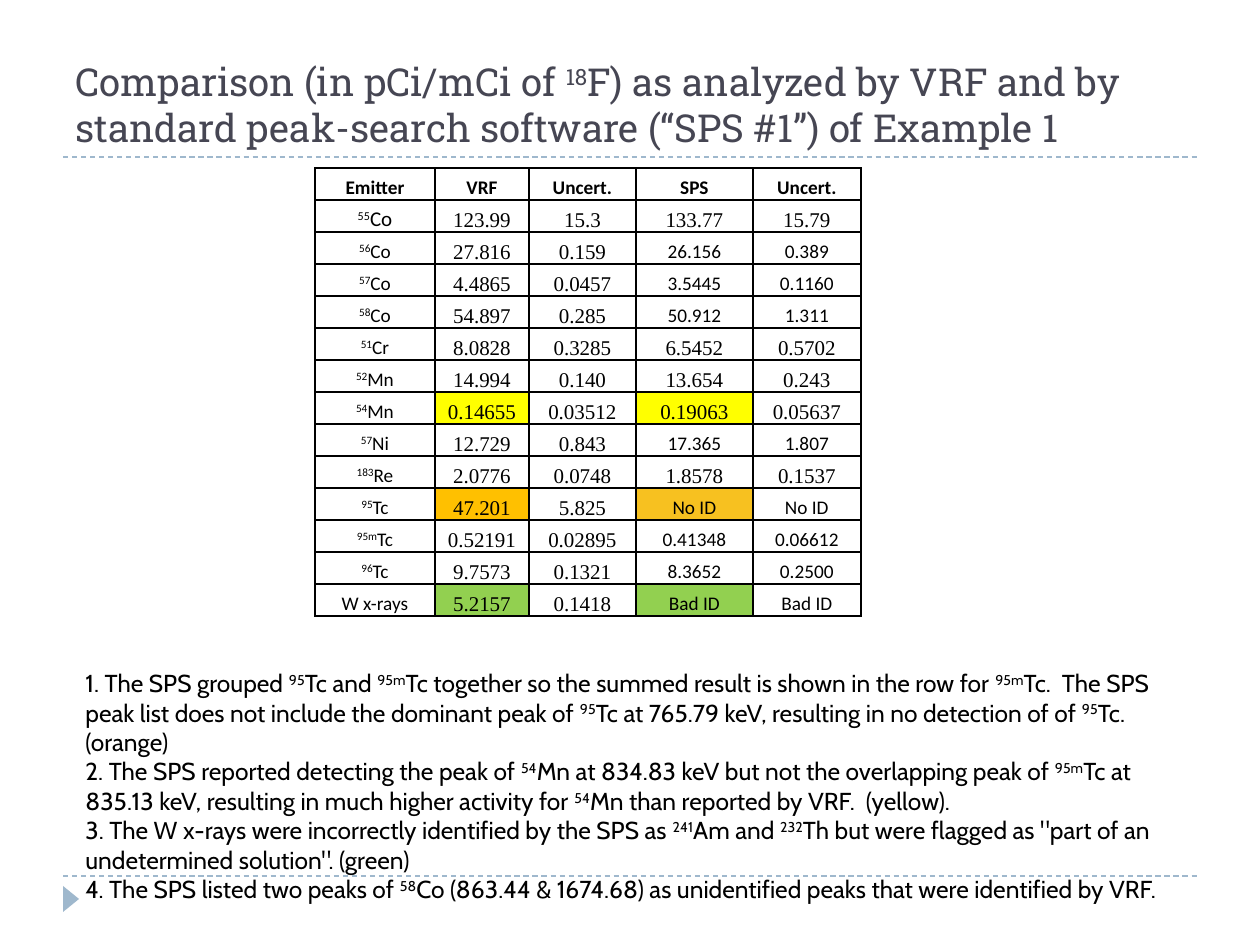
from dataclasses import dataclass, field

from lxml.etree import SubElement
from pptx import Presentation
from pptx.dml.color import RGBColor
from pptx.enum.dml import MSO_LINE
from pptx.enum.shapes import MSO_CONNECTOR, MSO_SHAPE
from pptx.enum.text import MSO_ANCHOR as Anchor, MSO_AUTO_SIZE as AutoSize, PP_ALIGN as Align
from pptx.oxml.ns import qn
from pptx.slide import Slide
from pptx.table import _Cell as Cell
from pptx.util import Emu, Pt

EMU_PER_PX = 914400 / 126

BLACK = RGBColor(0x00, 0x00, 0x00)
SLATE = RGBColor(0x46, 0x46, 0x53)
PALE_BLUE = RGBColor(0x9F, 0xB8, 0xCD)
YELLOW = RGBColor(0xFF, 0xFF, 0x00)
ORANGE = RGBColor(0xFF, 0xC0, 0x00)
AMBER = RGBColor(0xF7, 0xC1, 0x20)
GREEN = RGBColor(0x92, 0xD0, 0x50)


@dataclass(frozen=True)
class Style:
    font: str
    size: int
    color: RGBColor = BLACK
    bold: bool = False


TITLE_STYLE = Style("Roboto Slab", 22, SLATE)
NOTE_STYLE = Style("Cabin", 14)
HEADER_STYLE = Style("Calibri", 11, bold=True)
SANS = Style("Calibri", 11)
SANS_LARGE = Style("Calibri", 12)
SERIF = Style("Times New Roman", 12)


@dataclass(frozen=True)
class Emitter:
    name: str
    vrf: str
    vrf_uncert: str
    sps: str
    sps_uncert: str
    sps_style: Style = SERIF
    name_style: Style = SANS
    fills: dict[int, RGBColor] = field(default_factory=dict)

    def cells(self) -> list[tuple[str, Style]]:
        return [
            (self.name, self.name_style),
            (self.vrf, SERIF),
            (self.vrf_uncert, SERIF),
            (self.sps, self.sps_style),
            (self.sps_uncert, self.sps_style),
        ]


TITLE = (
    "Comparison (in pCi/mCi of ^18^F) as analyzed by VRF and by "
    "standard peak-search software (“SPS #1”) of Example 1"
)
HEADERS = ["Emitter", "VRF", "Uncert.", "SPS", "Uncert."]
COLUMN_WIDTHS = [120, 94, 107, 117, 108]
ROW_HEIGHT = 32
EMITTERS = [
    Emitter("^55^Co", "123.99", "15.3", "133.77", "15.79", name_style=SANS_LARGE),
    Emitter("^56^Co", "27.816", "0.159", "26.156", "0.389", SANS),
    Emitter("^57^Co", "4.4865", "0.0457", "3.5445", "0.1160", SANS),
    Emitter("^58^Co", "54.897", "0.285", "50.912", "1.311", SANS),
    Emitter("^51^Cr", "8.0828", "0.3285", "6.5452", "0.5702"),
    Emitter("^52^Mn", "14.994", "0.140", "13.654", "0.243"),
    Emitter("^54^Mn", "0.14655", "0.03512", "0.19063", "0.05637", fills={1: YELLOW, 3: YELLOW}),
    Emitter("^57^Ni", "12.729", "0.843", "17.365", "1.807", SANS),
    Emitter("^183^Re", "2.0776", "0.0748", "1.8578", "0.1537"),
    Emitter("^95^Tc", "47.201", "5.825", "No ID", "No ID", SANS, fills={1: ORANGE, 3: AMBER}),
    Emitter("^95m^Tc", "0.52191", "0.02895", "0.41348", "0.06612", SANS),
    Emitter("^96^Tc", "9.7573", "0.1321", "8.3652", "0.2500", SANS),
    Emitter("W x-rays", "5.2157", "0.1418", "Bad ID", "Bad ID", SANS, fills={1: GREEN, 3: GREEN}),
]
NOTES = [
    "1. The SPS grouped ^95^Tc and ^95m^Tc together so the summed result is shown in the row "
    "for ^95m^Tc.  The SPS peak list does not include the dominant peak of ^95^Tc at 765.79 keV, "
    "resulting in no detection of of ^95^Tc. (orange)",
    "2. The SPS reported detecting the peak of ^54^Mn at 834.83 keV but not the overlapping peak "
    "of ^95m^Tc at 835.13 keV, resulting in much higher activity for ^54^Mn than reported by VRF.  "
    "(yellow).",
    "3. The W x-rays were incorrectly identified by the SPS as ^241^Am and ^232^Th but were "
    'flagged as "part of an undetermined solution". (green)',
    "4. The SPS listed two peaks of ^58^Co (863.44 & 1674.68) as unidentified peaks that were "
    "identified by VRF.",
]


def px(length: int) -> Emu:
    return Emu(round(length * EMU_PER_PX))


def box(*lengths: int) -> list[Emu]:
    return [px(length) for length in lengths]


def write(paragraph, marked: str, style: Style, align: Align = Align.LEFT) -> None:
    paragraph.alignment = align
    for index, piece in enumerate(marked.split("^")):
        if not piece:
            continue
        run = paragraph.add_run()
        run.text = piece
        run.font.name = style.font
        run.font.size = Pt(style.size)
        run.font.bold = style.bold
        run.font.color.rgb = style.color
        if index % 2:
            run.font._element.set("baseline", "30000")


def draw_title(slide: Slide) -> None:
    title = slide.shapes.title
    title.left, title.top, title.width, title.height = box(63, 21, 1134, 136)
    frame = title.text_frame
    frame.word_wrap = True
    frame.auto_size = AutoSize.NONE
    frame.vertical_anchor = Anchor.BOTTOM
    write(frame.paragraphs[0], TITLE, TITLE_STYLE)


def draw_rule(slide: Slide, y: int) -> None:
    rule = slide.shapes.add_connector(MSO_CONNECTOR.STRAIGHT, *box(63, y, 1197, y))
    rule.line.color.rgb = PALE_BLUE
    rule.line.width = Pt(0.75)
    rule.line.dash_style = MSO_LINE.DASH
    SubElement(rule._element.spPr, qn("a:effectLst"))


def draw_marker(slide: Slide) -> None:
    marker = slide.shapes.add_shape(MSO_SHAPE.ISOSCELES_TRIANGLE, *box(58, 891, 26, 16))
    marker.rotation = 90
    marker.shadow.inherit = False
    marker.fill.solid()
    marker.fill.fore_color.rgb = PALE_BLUE
    marker.line.fill.background()


def format_cell(cell: Cell, marked: str, style: Style, fill: RGBColor | None) -> None:
    cell.margin_left = cell.margin_right = px(9)
    cell.margin_top = cell.margin_bottom = 0
    cell.vertical_anchor = Anchor.BOTTOM
    write(cell.text_frame.paragraphs[0], marked, style, Align.CENTER)
    properties = cell._tc.get_or_add_tcPr()
    for side in ("a:lnL", "a:lnR", "a:lnT", "a:lnB"):
        border = SubElement(properties, qn(side), w=str(Pt(1)))
        solid = SubElement(border, qn("a:solidFill"))
        SubElement(solid, qn("a:srgbClr"), val=str(BLACK))
    if fill is None:
        cell.fill.background()
    else:
        cell.fill.solid()
        cell.fill.fore_color.rgb = fill


def draw_table(slide: Slide) -> None:
    rows = [([(header, HEADER_STYLE) for header in HEADERS], {})]
    rows += [(emitter.cells(), emitter.fills) for emitter in EMITTERS]
    area = box(315, 168, sum(COLUMN_WIDTHS), ROW_HEIGHT * len(rows))
    table = slide.shapes.add_table(len(rows), len(HEADERS), *area).table
    table.horz_banding = False
    for column, width in zip(table.columns, COLUMN_WIDTHS):
        column.width = px(width)
    for r, (cells, fills) in enumerate(rows):
        table.rows[r].height = px(ROW_HEIGHT)
        for c, (marked, style) in enumerate(cells):
            format_cell(table.cell(r, c), marked, style, fills.get(c))


def draw_notes(slide: Slide) -> None:
    frame = slide.shapes.add_textbox(*box(73, 662, 1134, 220)).text_frame
    frame.word_wrap = True
    frame.auto_size = AutoSize.SHAPE_TO_FIT_TEXT
    for index, note in enumerate(NOTES):
        paragraph = frame.add_paragraph() if index else frame.paragraphs[0]
        write(paragraph, note, NOTE_STYLE)


def main() -> None:
    deck = Presentation()
    deck.slide_width, deck.slide_height = box(1260, 945)
    slide = deck.slides.add_slide(deck.slide_layouts[5])
    for y in (876, 157):
        draw_rule(slide, y)
    draw_marker(slide)
    draw_title(slide)
    draw_table(slide)
    draw_notes(slide)
    deck.save("out.pptx")


if __name__ == "__main__":
    main()
